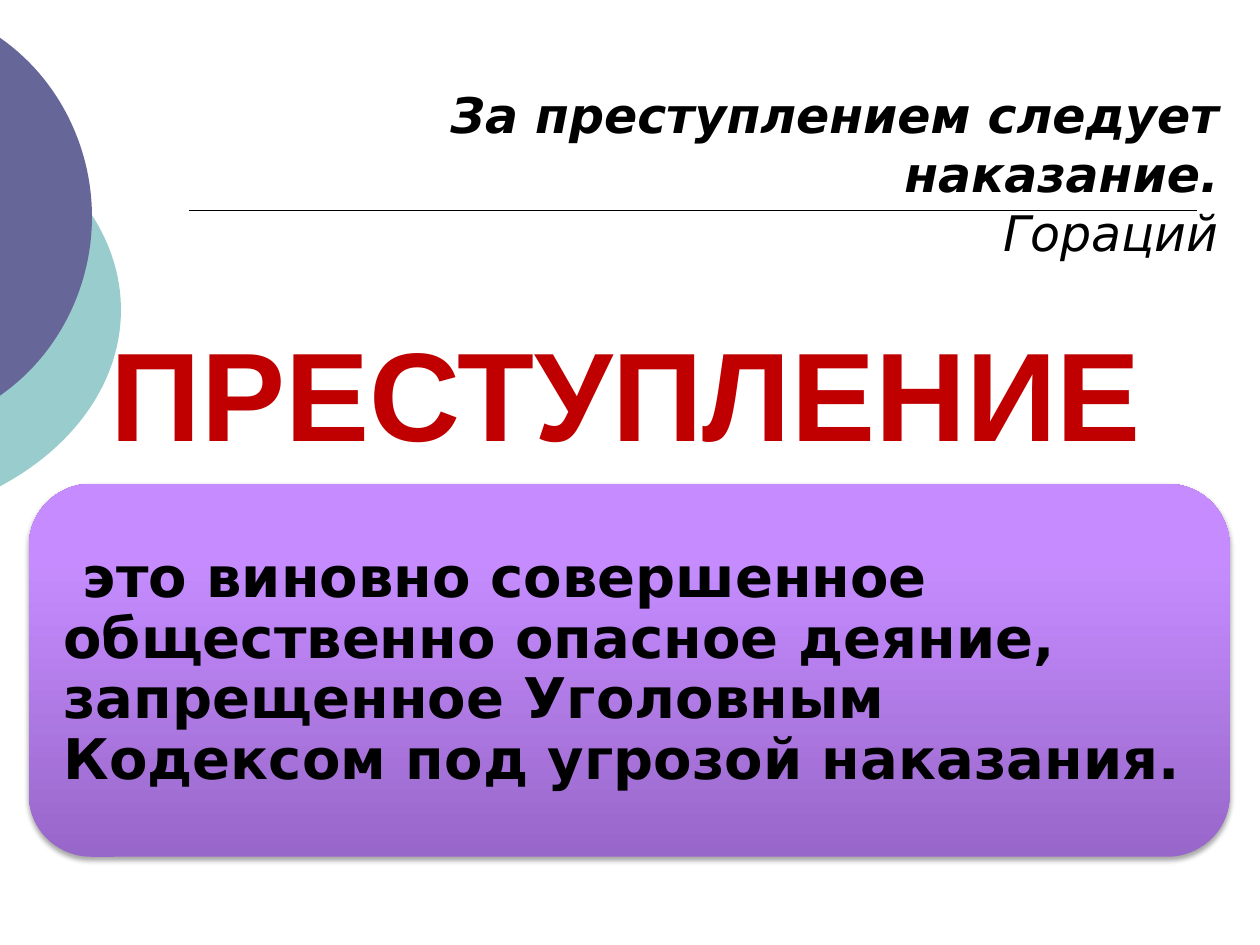
from lxml import etree
from pptx import Presentation
from pptx.dml.color import RGBColor
from pptx.enum import shapes, text
from pptx.oxml import parse_xml
from pptx.oxml.ns import nsdecls, qn
from pptx.util import Inches, Pt

BLACK = RGBColor(0, 0, 0)
RED = RGBColor(0xC0, 0, 0)
TEAL = RGBColor(0x99, 0xCC, 0xCC)
INDIGO = RGBColor(0x66, 0x66, 0x99)
SANS = "DejaVu Sans"

GRADIENT = f"""<a:gradFill {nsdecls('a')} rotWithShape="1"><a:gsLst>
<a:gs pos="0"><a:srgbClr val="9867CA"/></a:gs>
<a:gs pos="80000"><a:srgbClr val="C68CFF"/></a:gs>
<a:gs pos="100000"><a:srgbClr val="C78EFF"/></a:gs>
</a:gsLst><a:lin ang="16200000" scaled="0"/></a:gradFill>"""
SHADOW = f"""<a:effectLst {nsdecls('a')}>
<a:outerShdw blurRad="39400" dist="22900" dir="5400000" rotWithShape="0">
<a:srgbClr val="000000"><a:alpha val="35000"/></a:srgbClr>
</a:outerShdw></a:effectLst>"""


def style(run, font, size, color, bold=False, italic=False):
    run.font.name = font
    run.font.size = Pt(size)
    run.font.color.rgb = color
    run.font.bold = bold
    run.font.italic = italic


def add_text(slide, box, lines, align, anchor):
    frame = slide.shapes.add_textbox(*map(Inches, box)).text_frame
    frame.word_wrap = True
    frame.vertical_anchor = anchor
    frame.text = "\n".join(lines)
    for para in frame.paragraphs:
        para.alignment = align
    return [para.runs[0] for para in frame.paragraphs]


def add_disc(slide, box, start, knee, shoulder, color):
    """Fill the part of a disc right of the slide edge; all points are on the slide.

    The arc runs from start by the handles knee and shoulder to the right
    side of the box, and back as its mirror image.
    """
    left, top, width, height = box
    right = left + width
    middle = start[1] + shoulder[2]
    mirror = lambda y: 2 * middle - y
    arcs = [
        [knee, (right, shoulder[1]), (right, middle)],
        [(right, mirror(shoulder[1])), (knee[0], mirror(knee[1])),
         (start[0], mirror(start[1]))],
    ]
    pen = slide.shapes.build_freeform(Inches(left), Inches(top))
    pen.add_line_segments([(Inches(right), Inches(top + height))], close=True)
    disc = pen.convert_to_shape()
    track = disc._element.spPr.find(".//" + qn("a:path"))
    for step in list(track):
        track.remove(step)

    def add_step(kind, points):
        step = etree.SubElement(track, qn(kind))
        for x, y in points:
            etree.SubElement(step, qn("a:pt"), x=str(Inches(x - left)),
                             y=str(Inches(y - top)))

    add_step("a:moveTo", [start])
    for arc in arcs:
        add_step("a:cubicBezTo", arc)
    add_step("a:close", [])
    disc.shadow.inherit = False
    disc.fill.solid()
    disc.fill.fore_color.rgb = color
    disc.line.fill.background()


def add_rule(slide, left, top, width):
    rule = slide.shapes.add_connector(
        shapes.MSO_CONNECTOR.STRAIGHT,
        *map(Inches, (left, top, left + width, top)))
    rule.line.color.rgb = BLACK
    rule.line.width = Pt(1)
    etree.SubElement(rule._element.spPr, qn("a:effectLst"))


def add_decor(slide):
    add_disc(slide, (-3.54, 0.75, 4.5, 3.42), (0, 1.06), (0.6, 1.38),
             (0.96, 1.9, 1.4), TEAL)
    add_disc(slide, (-2.65, 0, 3.38, 3.45), (0, 0.3), (0.46, 0.62),
             (0.73, 1.16, 1.42), INDIGO)
    add_rule(slide, 1.5, 1.67, 8)


def add_title(slide, box):
    run, = add_text(slide, box, ["ПРЕСТУПЛЕНИЕ"],
                    text.PP_ALIGN.CENTER, text.MSO_ANCHOR.BOTTOM)
    style(run, "Arial", 72, RED, bold=True)


def add_panel(slide, box):
    panel = slide.shapes.add_shape(
        shapes.MSO_SHAPE.ROUNDED_RECTANGLE, *map(Inches, box))
    panel.line.fill.background()
    props = panel._element.spPr
    props.find(qn("a:prstGeom")).addnext(parse_xml(GRADIENT))
    props.append(parse_xml(SHADOW))
    frame = panel.text_frame
    frame.word_wrap = True
    frame.vertical_anchor = text.MSO_ANCHOR.MIDDLE
    frame.margin_left = frame.margin_right = Inches(0.13)
    frame.margin_top = frame.margin_bottom = Inches(0.13)
    para = frame.paragraphs[0]
    para.text = (" это виновно совершенное общественно опасное деяние, "
                 "запрещенное Уголовным Кодексом под угрозой наказания.")
    para.alignment = text.PP_ALIGN.LEFT
    para.line_spacing = 0.9
    style(para.runs[0], SANS, 32, BLACK, bold=True)


def add_quote(slide, box):
    quote, author = add_text(
        slide, box, ["За преступлением следует наказание.", "Гораций"],
        text.PP_ALIGN.RIGHT, text.MSO_ANCHOR.TOP)
    style(quote, SANS, 28, BLACK, bold=True, italic=True)
    style(author, SANS, 28, BLACK, italic=True)


def main():
    deck = Presentation()
    deck.slide_width, deck.slide_height = Inches(10), Inches(7.5)
    slide = deck.slides.add_slide(deck.slide_layouts[6])
    add_decor(slide)
    add_title(slide, (0.47, 2.5, 9, 1.25))
    add_panel(slide, (0.23, 3.84, 9.53, 2.96))
    add_quote(slide, (0.94, 0.62, 8.83, 1.51))
    deck.save("out.pptx")


if __name__ == "__main__":
    main()
